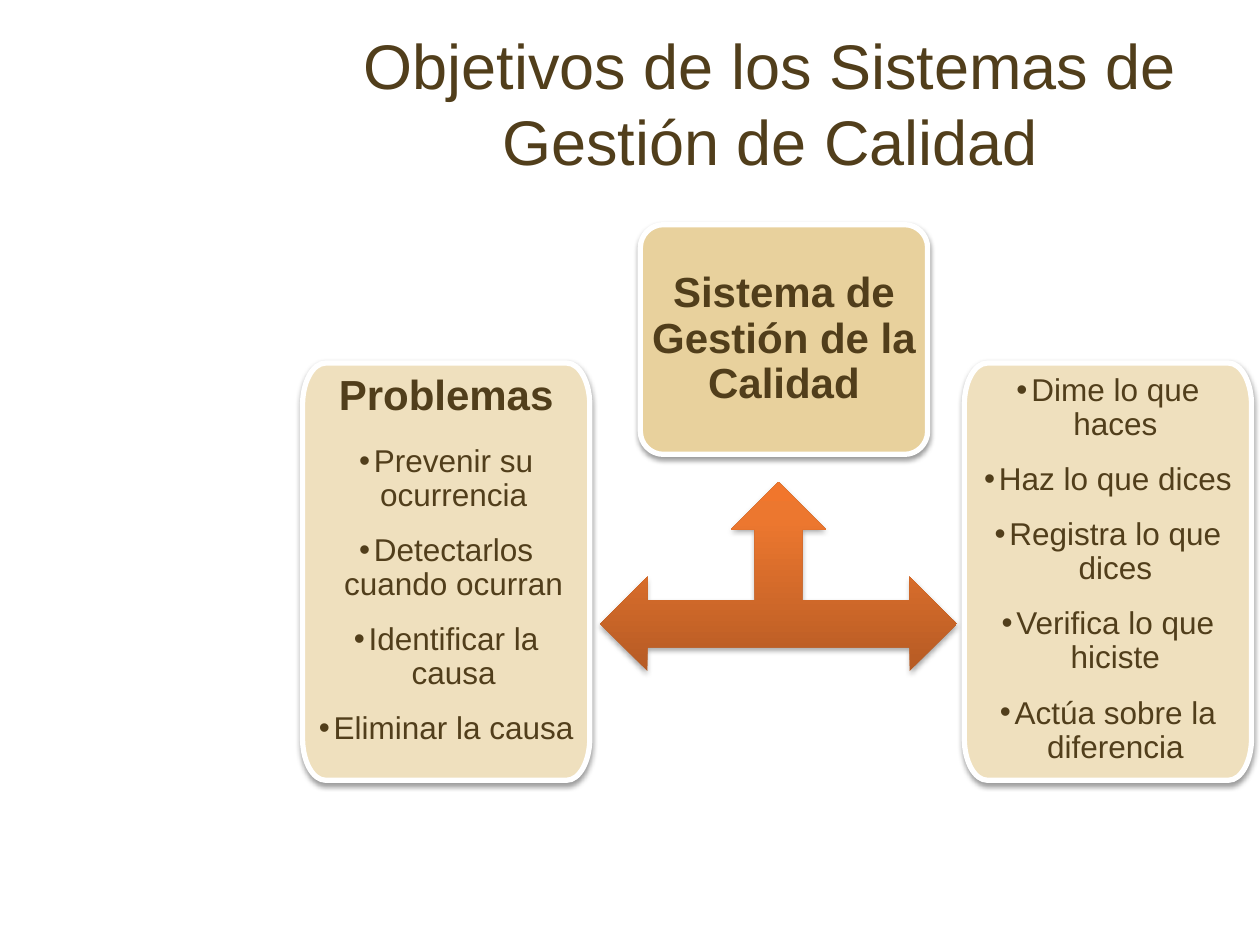
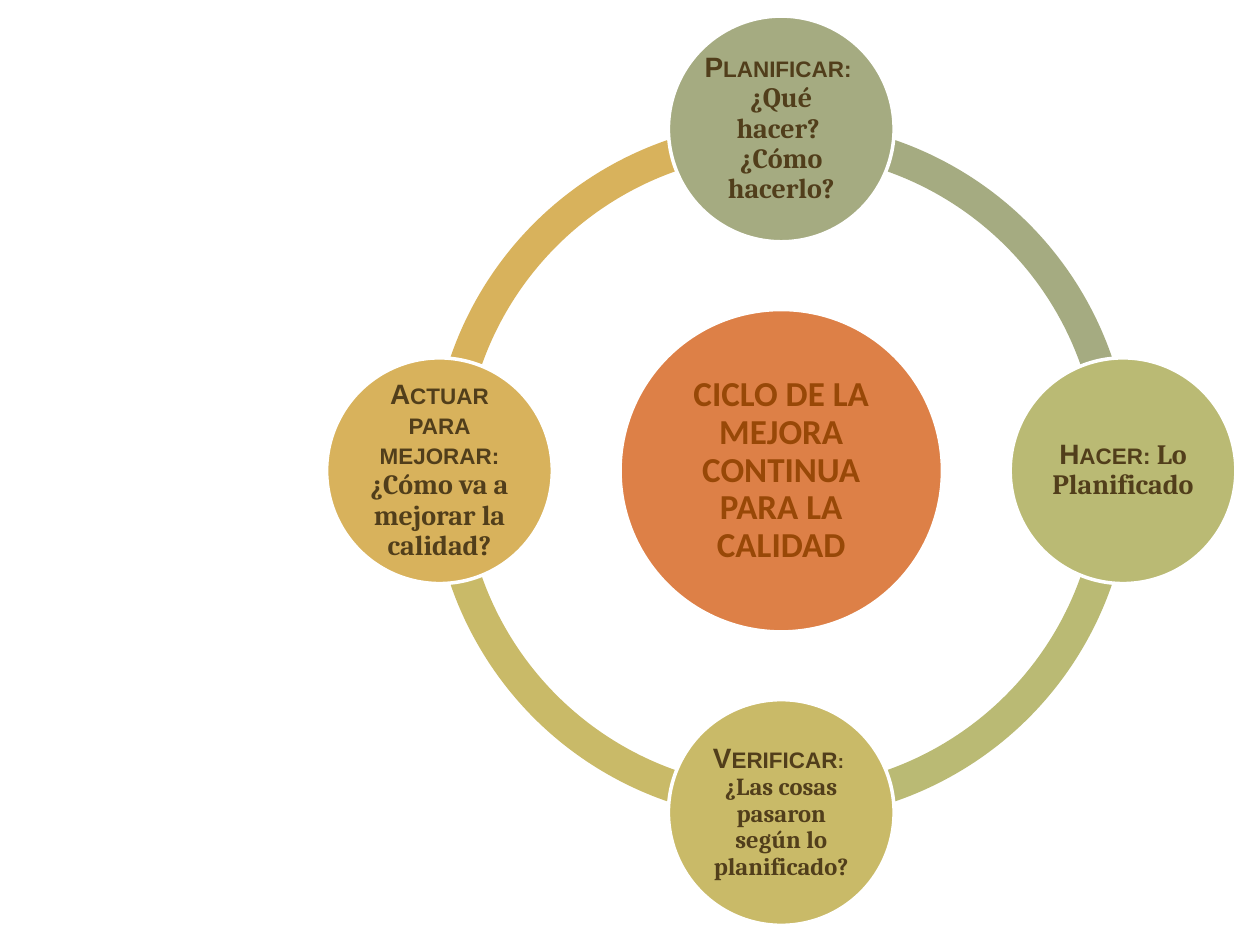
import copy
import math

from lxml import etree
from pptx import Presentation
from pptx import util as u
from pptx.dml.color import RGBColor
from pptx.enum import shapes, text
from pptx.oxml.ns import qn

BROWN, RUST, WHITE = "513E1B", "984807", "FFFFFF"
SAND, PALE_SAND = "E8D19D", "EFE0BE"
SAGE, OLIVE, MUSTARD, GOLD, ORANGE = "A5AB81", "BABA74", "C9BA68", "D8B25C", "DD8047"


def rgb(value):
    return RGBColor.from_string(value)


def add_xml(parent, tag, **attributes):
    child = etree.SubElement(parent, qn(tag))
    for name, value in attributes.items():
        child.set(name, str(value))
    return child


def round_corners(shape):
    """Turn the first three of every four line segments into one curve."""
    lines = list(shape._element.spPr.iter(qn("a:lnTo")))
    for first in range(0, len(lines), 4):
        curve = etree.Element(qn("a:cubicBezTo"))
        lines[first].addprevious(curve)
        for line in lines[first:first + 3]:
            curve.append(line[0])
            line.getparent().remove(line)


class SlideBuilder:
    """Holds the deck, the current page and the shared text style."""

    base = {"name": "Arial", "size": 18, "bold": False, "color": BROWN}

    def __init__(self):
        self.deck = Presentation()
        self.deck.slide_width, self.deck.slide_height = u.Cm(25.4), u.Cm(19.05)
        self.page = None

    def new_page(self):
        self.page = self.deck.slides.add_slide(self.deck.slide_layouts[6])

    def span(self, para, words, **style):
        """Add a run; each newline in words becomes a line break of the same style."""
        style = {**self.base, **style}
        for index, line in enumerate(words.split("\n")):
            if index:
                properties = copy.deepcopy(para.runs[-1]._r.rPr)
                para.add_line_break()
                para._p[-1].append(properties)
            if not line:
                continue
            run = para.add_run()
            run.text = line
            for name in ("name", "bold"):
                setattr(run.font, name, style[name])
            run.font.size = u.Pt(style["size"])
            run.font.color.rgb = rgb(style["color"])
            if style.get("small_caps"):
                run._r.get_or_add_rPr().set("cap", "small")

    def frame(self, box, inset, anchor=text.MSO_ANCHOR.MIDDLE):
        frame = box.text_frame
        settings = {"word_wrap": True, "vertical_anchor": anchor}
        for side in ("left", "top", "right", "bottom"):
            settings[f"margin_{side}"] = u.Cm(inset)
        for name, value in settings.items():
            setattr(frame, name, value)
        return frame

    def paragraph(self, frame, spacing=0.9, before=0, after=0, bullet=False):
        para = frame.paragraphs[0]
        if para.runs:
            para = frame.add_paragraph()
            para.space_before = u.Pt(before)
        para.alignment = text.PP_ALIGN.CENTER
        para.line_spacing = spacing
        para.space_after = u.Pt(after)
        if bullet:
            properties = para._p.get_or_add_pPr()
            indent = u.Cm(0.3)
            properties.set("marL", str(indent))
            properties.set("indent", str(-indent))
            add_xml(properties, "a:buFont", typeface="Arial")
            add_xml(properties, "a:buChar", char="•")
        return para

    def paint(self, shape, fill, line_width=0):
        shape.fill.solid()
        shape.fill.fore_color.rgb = rgb(fill)
        if line_width:
            shape.line.color.rgb = rgb(WHITE)
            shape.line.width = u.Pt(line_width)
        else:
            shape.line.fill.background()
        shape.shadow.inherit = False

    def cast_shadow(self, shape, distance, opacity):
        shape.shadow.inherit = False
        effects = shape._element.spPr.find(qn("a:effectLst"))
        shadow = add_xml(effects, "a:outerShdw", blurRad=u.Pt(3.1), dist=u.Pt(distance),
                         dir=5400000, algn="ctr", rotWithShape=0)
        color = add_xml(shadow, "a:srgbClr", val="000000")
        add_xml(color, "a:alpha", val=opacity * 1000)

    def title(self, words):
        box = self.page.shapes.add_textbox(u.Cm(6.1), u.Cm(0.71), u.Cm(18.85), u.Cm(3.18))
        frame = self.frame(box, 0.13)
        frame.margin_bottom = u.Cm(0.6)
        self.span(self.paragraph(frame, spacing=1.0), words, size=36)

    def card(self, left, top, height, fill, heading="", bullets=()):
        """Draw a card whose corner radii follow its width and height separately."""
        width = 5.79
        radius_x, radius_y = 0.08 * width, 0.1 * height
        right, bottom = left + width, top + height
        pull = 0.45
        points = []
        for edge_x, edge_y, inward_x, inward_y in (
                (right, top, -radius_x, radius_y), (right, bottom, -radius_x, -radius_y),
                (left, bottom, radius_x, -radius_y), (left, top, radius_x, radius_y)):
            corner = [(edge_x + inward_x, edge_y), (edge_x + inward_x * pull, edge_y),
                      (edge_x, edge_y + inward_y * pull), (edge_x, edge_y + inward_y)]
            points += corner if inward_x * inward_y < 0 else corner[::-1]
        points = [(u.Cm(x), u.Cm(y)) for x, y in points]
        outline = self.page.shapes.build_freeform(*points[0])
        outline.add_line_segments(points[1:], close=True)
        shape = outline.convert_to_shape()
        round_corners(shape)
        self.paint(shape, fill, 3)
        self.cast_shadow(shape, 1.6, 38)
        anchor = text.MSO_ANCHOR.TOP if bullets else text.MSO_ANCHOR.MIDDLE
        frame = self.frame(shape, 0.23, anchor)
        if heading:
            para = self.paragraph(frame, after=8.4 if bullets else 0)
            self.span(para, heading, size=24, bold=True)
        for words in bullets:
            self.span(self.paragraph(frame, before=6, after=6, bullet=True), words)

    def three_way_arrow(self, left, top, width, height):
        arrow = self.page.shapes.add_shape(shapes.MSO_SHAPE.LEFT_RIGHT_UP_ARROW,
                                           *map(u.Cm, (left, top, width, height)))
        arrow.fill.gradient()
        arrow.fill.gradient_angle = 90
        stops = arrow._element.spPr.find(qn("a:gradFill")).find(qn("a:gsLst"))
        for stop in list(stops):
            stops.remove(stop)
        for percent, color in ((0, "B65B24"), (80, "EC772F"), (100, "F1762C")):
            stop = add_xml(stops, "a:gs", pos=percent * 1000)
            add_xml(stop, "a:srgbClr", val=color)
        arrow.line.fill.background()
        self.cast_shadow(arrow, 1.8, 35)

    def centered(self, kind, center_x, center_y, diameter, fill, line_width=0):
        shape = self.page.shapes.add_shape(
            kind, u.Cm(center_x - diameter / 2), u.Cm(center_y - diameter / 2),
            u.Cm(diameter), u.Cm(diameter))
        self.paint(shape, fill, line_width)

        return shape

    def ring_arc(self, center_x, center_y, diameter, start, fill):
        """Draw a quarter ring clockwise from start, in degrees."""
        arc = self.centered(shapes.MSO_SHAPE.BLOCK_ARC, center_x, center_y, diameter, fill)
        # Adjustments count 100000 units; angles count 60000 per degree.
        for index, value in enumerate((start * 0.6, (start + 90) % 360 * 0.6, 0.046)):
            arc.adjustments[index] = value

    def circle(self, center_x, center_y, diameter, fill, spans, inset=0.05):
        """Draw a circle and a text box on the square that fits inside it."""
        self.centered(shapes.MSO_SHAPE.OVAL, center_x, center_y, diameter, fill, 2)
        side = diameter / math.sqrt(2)
        box = self.page.shapes.add_textbox(
            u.Cm(center_x - side / 2), u.Cm(center_y - side / 2), u.Cm(side), u.Cm(side))
        para = self.paragraph(self.frame(box, inset))
        for words, style in spans:
            self.span(para, words, **{"size": 16, "bold": True, **style})


def build_objectives(builder):
    builder.new_page()
    builder.title("Objetivos de los Sistemas de Gestión de Calidad")
    side_top, side_height = 7.32, 8.41
    builder.card(6.1, side_top, side_height, PALE_SAND, "Problemas", (
        "Prevenir su ocurrencia", "Detectarlos cuando ocurran",
        "Identificar la causa", "Eliminar la causa"))
    builder.card(12.91, 4.53, 4.63, SAND, "Sistema de Gestión de la Calidad")
    builder.card(19.44, side_top, side_height, PALE_SAND, bullets=(
        "Dime lo que haces", "Haz lo que dices", "Registra lo que dices",
        "Verifica lo que hiciste", "Actúa sobre la diferencia"))
    builder.three_way_arrow(12.1, 9.72, 7.19, 3.81)


def build_cycle(builder):
    builder.new_page()
    center_x, center_y, orbit = 15.75, 9.49, 6.89
    caps, serif = {"small_caps": True}, {"name": "Cambria"}
    stages = [
        (SAGE, [("Planificar: \n", caps), ("¿Qué\nhacer? \n¿Cómo\nhacerlo?", serif)]),
        (OLIVE, [("Hacer: ", caps), ("Lo Planificado", serif)]),
        (MUSTARD, [("Verificar", caps), (": \n", {**caps, "size": 14}),
                   ("¿Las cosas pasaron según lo planificado?", {**serif, "size": 14})]),
        (GOLD, [("Actuar para mejorar: ", caps), ("¿Cómo va a mejorar la calidad?", serif)]),
    ]
    starts = (270, 0, 90, 180)
    for start, (fill, _) in reversed(list(zip(starts, stages))):
        builder.ring_arc(center_x, center_y, 14.1, start, fill)
    builder.circle(center_x, center_y, 6.5, ORANGE, [
        ("CICLO DE LA MEJORA CONTINUA PARA LA CALIDAD",
         {"name": "Calibri", "size": 20, "color": RUST})], inset=0.08)
    for start, (fill, spans) in zip(starts, stages):
        angle = math.radians(start)
        builder.circle(center_x + orbit * math.cos(angle), center_y + orbit * math.sin(angle),
                       4.55, fill, spans)


def main():
    builder = SlideBuilder()
    build_objectives(builder)
    build_cycle(builder)
    builder.deck.save("out.pptx")


if __name__ == "__main__":
    main()
